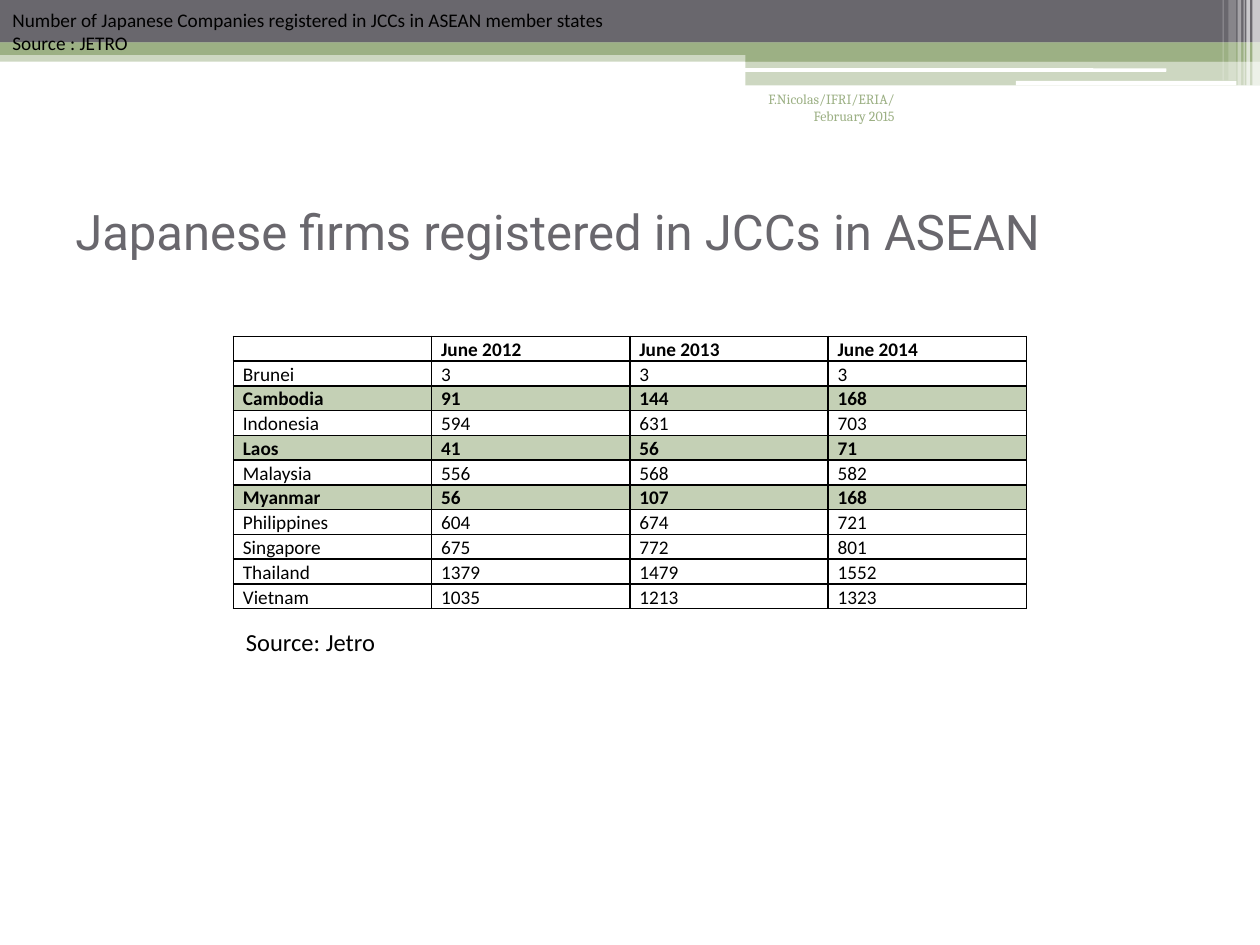
import pptx
import pptx.dml.color
import pptx.enum.shapes
import pptx.enum.text
import pptx.oxml.ns
import pptx.util
from lxml import etree

Pt = pptx.util.Pt
RGBColor = pptx.dml.color.RGBColor
SHAPE = pptx.enum.shapes.MSO_SHAPE
ALIGN = pptx.enum.text.PP_ALIGN
ANCHOR = pptx.enum.text.MSO_ANCHOR
qn = pptx.oxml.ns.qn

GREY = RGBColor(0x69, 0x67, 0x6D)
GREEN = RGBColor(0x9C, 0xB0, 0x84)
PALE_GREEN = RGBColor(0xC4, 0xD0, 0xB5)
BLACK = RGBColor(0, 0, 0)
WHITE = RGBColor(0xFF, 0xFF, 0xFF)

# left, top, width, height, colour, opacity in percent
BANDS = [
    (0, 28.8, 720, 6.5, GREEN, 50),
    (0, 0, 720, 24.4, GREY, 100),
    (0, 24.2, 720, 7.2, GREEN, 100),
    (426, 28, 294, 7.2, GREEN, 100),
    (426, 34.8, 294, 14, GREEN, 50),
]
WHITE_BARS = [(425.5, 39, 241, 2), (580.5, 46.2, 126, 2.6)]
# left, width, height, opacity in percent
STRIPES = [
    (715.6, 4.4, 49, 65),
    (712.2, 2, 49, 65),
    (710.6, 0.72, 49, 60),
    (707.2, 2, 49, 40),
    (702, 4.3, 46, 20),
    (698.6, 0.72, 46, 30),
]

FIRMS = [
    ("", "June 2012", "June 2013", "June 2014"),
    ("Brunei", 3, 3, 3),
    ("Cambodia", 91, 144, 168),
    ("Indonesia", 594, 631, 703),
    ("Laos", 41, 56, 71),
    ("Malaysia", 556, 568, 582),
    ("Myanmar", 56, 107, 168),
    ("Philippines", 604, 674, 721),
    ("Singapore", 675, 772, 801),
    ("Thailand", 1379, 1479, 1552),
    ("Vietnam", 1035, 1213, 1323),
]
HIGHLIGHTED = {"Cambodia", "Laos", "Myanmar"}


def add_band(s, x, y, w, h, color, opacity=100, shape=SHAPE.RECTANGLE):
    sp = s.shapes.add_shape(shape, Pt(x), Pt(y), Pt(w), Pt(h))
    sp.shadow.inherit = False
    sp.fill.solid()
    sp.fill.fore_color.rgb = color
    sp.line.fill.background()
    if opacity < 100:
        clr = sp.fill._xPr.find(".//" + qn("a:srgbClr"))
        etree.SubElement(clr, qn("a:alpha"), val=str(opacity * 1000))
    return sp


def style(p, font, size, color, bold=False):
    p.font.name = font
    p.font.size = Pt(size)
    p.font.color.rgb = color
    p.font.bold = bold


def add_text(s, x, y, w, h, lines, font, size, color,
             align=ALIGN.LEFT, anchor=ANCHOR.TOP):
    tf = s.shapes.add_textbox(Pt(x), Pt(y), Pt(w), Pt(h)).text_frame
    tf.word_wrap = True
    tf.vertical_anchor = anchor
    tf.text = "\n".join(lines)
    for p in tf.paragraphs:
        p.alignment = align
        style(p, font, size, color)


def add_borders(cell):
    tc_pr = cell._tc.get_or_add_tcPr()
    for i, side in enumerate(("a:lnL", "a:lnR", "a:lnT", "a:lnB")):
        ln = etree.Element(qn(side), w=str(Pt(1)))
        fill = etree.SubElement(ln, qn("a:solidFill"))
        etree.SubElement(fill, qn("a:srgbClr"), val=str(BLACK))
        tc_pr.insert(i, ln)


def fill_cell(cell, value, bold, highlighted):
    cell.margin_left = cell.margin_right = Pt(5.4)
    cell.margin_top = cell.margin_bottom = 0
    p = cell.text_frame.paragraphs[0]
    p.text = str(value)
    p.line_spacing = 1.07
    style(p, "Calibri", 11, BLACK, bold)
    if value == "":  # keeps the empty cell as low as its row
        etree.SubElement(p._p, qn("a:endParaRPr"), sz="1100")
    if highlighted:
        cell.fill.solid()
        cell.fill.fore_color.rgb = PALE_GREEN
    else:
        cell.fill.background()
    add_borders(cell)


def add_firm_table(s, x, y, w, h):
    rows, cols = len(FIRMS), len(FIRMS[0])
    table = s.shapes.add_table(rows, cols, Pt(x), Pt(y), Pt(w), Pt(h)).table
    table.first_row = table.horz_banding = False
    for r, record in enumerate(FIRMS):
        highlighted = record[0] in HIGHLIGHTED
        for c, value in enumerate(record):
            fill_cell(table.cell(r, c), value, r == 0 or highlighted, highlighted)


def main():
    prs = pptx.Presentation()
    prs.slide_width, prs.slide_height = Pt(720), Pt(540)
    s = prs.slides.add_slide(prs.slide_layouts[6])

    # Header decoration
    for band in BANDS:
        add_band(s, *band)
    for bar in WHITE_BARS:
        add_band(s, *bar, WHITE, shape=SHAPE.ROUNDED_RECTANGLE)
    for x, w, h, opacity in STRIPES:
        add_band(s, x, 0, w, h, WHITE, opacity)

    # Title and footer
    add_text(s, 36, 90, 648, 84, ["Japanese firms registered in JCCs in ASEAN"],
             "Roboto", 28, GREY, anchor=ANCHOR.MIDDLE)
    add_text(s, 414, 48.2, 104.4, 36, ["F.Nicolas/IFRI/ERIA/ February 2015"],
             "Cambria", 8, GREEN, align=ALIGN.RIGHT)

    # Table with its caption and source
    add_firm_table(s, 133.4, 192.2, 453.2, 155.5)
    add_text(s, 0, 0, 720, 36,
             ["Number of Japanese Companies registered in JCCs in ASEAN member states",
              "Source : JETRO"],
             "Calibri", 11, BLACK, anchor=ANCHOR.MIDDLE)
    add_text(s, 133.4, 355, 209.5, 24.5, ["Source: Jetro"], "Calibri", 14, BLACK)

    prs.save("out.pptx")


if __name__ == "__main__":
    main()
